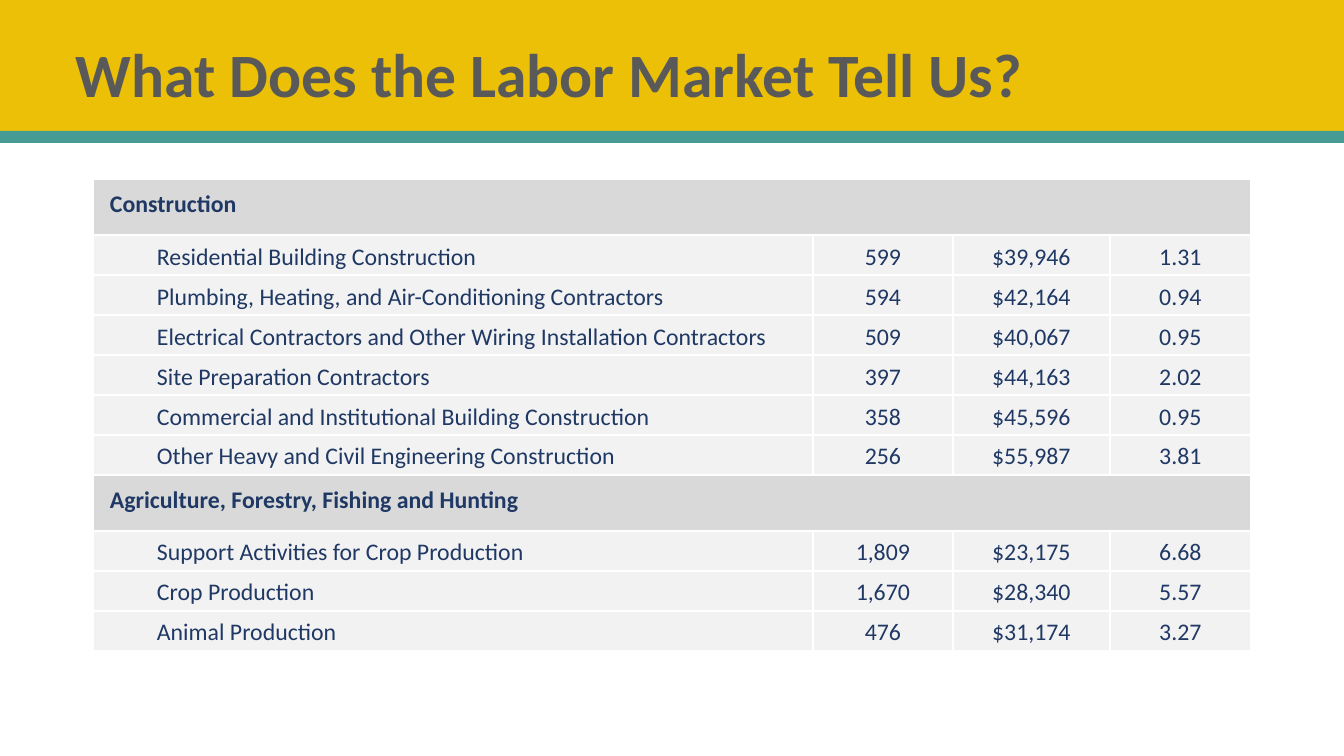
from pptx import Presentation
from pptx import util as u
from pptx.dml.color import RGBColor
from pptx.enum import shapes, text
from pptx.oxml.ns import qn
from lxml import etree

SCALE = 914400 / 100.8
FONT = "Calibri"
HUES = {
    "gold": "ECC007",
    "teal": "469C95",
    "title": "595959",
    "ink": "1F3864",
    "head": "D9D9D9",
    "row": "F2F2F2",
    "rule": "FFFFFF",
}
COLS = [51, 669, 140, 157, 141]
HEAD, ROW = 56, 40
SECTORS = [
    ("Construction", [
        ("Residential Building Construction", "599", "$39,946", "1.31"),
        ("Plumbing, Heating, and Air-Conditioning Contractors", "594", "$42,164", "0.94"),
        ("Electrical Contractors and Other Wiring Installation Contractors",
         "509", "$40,067", "0.95"),
        ("Site Preparation Contractors", "397", "$44,163", "2.02"),
        ("Commercial and Institutional Building Construction", "358", "$45,596", "0.95"),
        ("Other Heavy and Civil Engineering Construction", "256", "$55,987", "3.81"),
    ]),
    ("Agriculture, Forestry, Fishing and Hunting", [
        ("Support Activities for Crop Production", "1,809", "$23,175", "6.68"),
        ("Crop Production", "1,670", "$28,340", "5.57"),
        ("Animal Production", "476", "$31,174", "3.27"),
    ]),
]


def px(n):
    return u.Emu(round(n * SCALE))


def hue(name):
    return RGBColor.from_string(HUES[name])


def paint(item, name):
    item.fill.solid()
    item.fill.fore_color.rgb = hue(name)


def add_run(para, words, size, color, bold):
    run = para.add_run()
    run.text = words
    font = run.font
    font.name, font.size, font.bold = FONT, u.Pt(size), bold
    font.color.rgb = hue(color)


def add_band(slide, top, height, color):
    band = slide.shapes.add_shape(
        shapes.MSO_SHAPE.RECTANGLE, 0, px(top), px(1344), px(height))
    band.shadow.inherit = False
    paint(band, color)
    band.line.fill.background()


def add_title(slide, words):
    box = slide.shapes.add_textbox(px(66), px(5), px(1159), px(146))
    frame = box.text_frame
    frame.word_wrap = True
    frame.vertical_anchor = text.MSO_ANCHOR.MIDDLE
    para = frame.paragraphs[0]
    para.line_spacing = 0.9
    add_run(para, words, 44, "title", True)


def add_rules(cell, bare):
    props = cell._tc.get_or_add_tcPr()
    for side in "LRTB":
        line = etree.SubElement(props, qn(f"a:ln{side}"), w=str(u.Pt(1.5)))
        if side == bare:
            etree.SubElement(line, qn("a:noFill"))
        else:
            fill = etree.SubElement(line, qn("a:solidFill"))
            etree.SubElement(fill, qn("a:srgbClr"), val=HUES["rule"])


def style_cell(cell, color, pads, bare=""):
    left, top, right, base = map(px, pads)
    cell.margin_left, cell.margin_top = left, top
    cell.margin_right, cell.margin_bottom = right, base
    add_rules(cell, bare)
    paint(cell, color)


def fill_cell(cell, words, bold=False, align=None):
    para = cell.text_frame.paragraphs[0]
    para.line_spacing = 1.07
    para.alignment = align
    add_run(para, words, 17, "ink", bold)


def fill_head(cells, name):
    cells[0].merge(cells[-1])
    for cell in cells:
        style_cell(cell, "head", (17, 9, 17, 9))
    fill_cell(cells[0], name, bold=True)


def fill_row(cells, values):
    style_cell(cells[0], "row", (0, 0, 0, 0), bare="R")
    for col, (cell, value) in enumerate(zip(cells[1:], values)):
        style_cell(cell, "row", (13, 2, 13, 0), bare="" if col else "L")
        cell.vertical_anchor = text.MSO_ANCHOR.MIDDLE
        fill_cell(cell, value, align=text.PP_ALIGN.CENTER if col else None)


def add_jobs(slide):
    lines = []
    for name, jobs in SECTORS:
        lines += [(HEAD, fill_head, name)]
        lines += [(ROW, fill_row, job) for job in jobs]
    high = sum(line[0] for line in lines)
    table = slide.shapes.add_table(
        len(lines), len(COLS), px(93), px(179), px(sum(COLS)), px(high)).table
    table.first_row = table.horz_banding = False
    for col, width in zip(table.columns, COLS):
        col.width = px(width)
    for row, (height, fill, data) in zip(table.rows, lines):
        row.height = px(height)
        fill(list(row.cells), data)


def main():
    deck = Presentation()
    deck.slide_width, deck.slide_height = px(1344), px(756)
    slide = deck.slides.add_slide(deck.slide_layouts[6])
    add_band(slide, 0, 142, "gold")
    add_band(slide, 131, 12, "teal")
    add_jobs(slide)
    add_title(slide, "What Does the Labor Market Tell Us?")
    deck.save("out.pptx")


if __name__ == "__main__":
    main()
